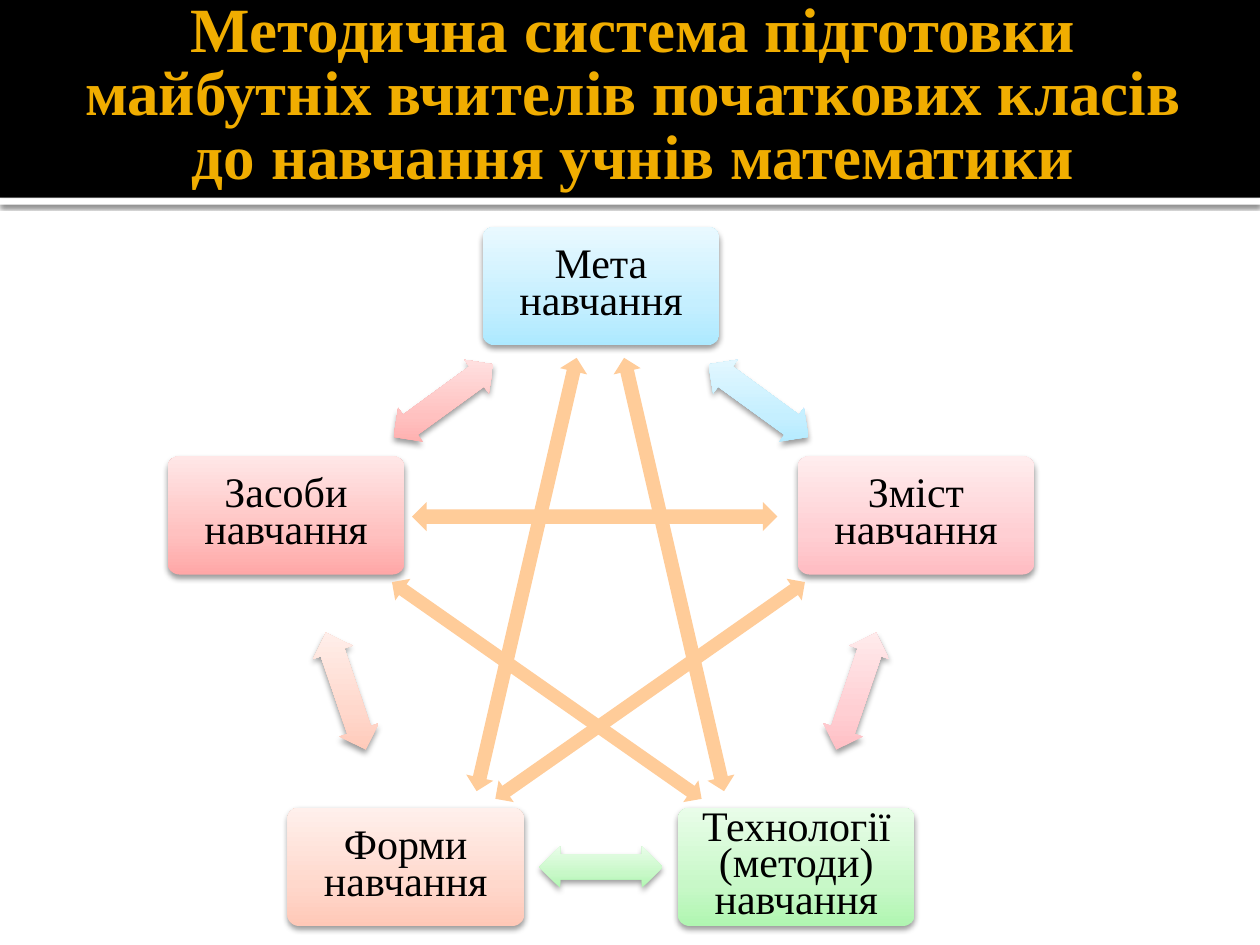
import math
from dataclasses import dataclass

import pptx
import pptx.dml.color
import pptx.enum.shapes
import pptx.enum.text
import pptx.oxml
import pptx.oxml.ns
import pptx.util
from pptx.util import Inches

MSO = pptx.enum.shapes.MSO_SHAPE
NS = pptx.oxml.ns.nsdecls("a")


@dataclass(frozen=True)
class Theme:
    font: str = "Times New Roman"
    title_size: int = 36
    node_size: int = 24
    band: str = "000000"
    rule: str = "FFFFFF"
    title: str = "F0AD00"
    text: str = "000000"
    star: str = "FFCC99"


@dataclass(frozen=True)
class Shadow:
    alpha: int
    blur: float
    dist: float


@dataclass(frozen=True)
class Node:
    text: str
    cx: float
    cy: float
    stops: tuple[str, str, str]  # bottom, 35 %, top


@dataclass(frozen=True)
class StarArrow:
    cx: float
    cy: float
    width: float
    length: float
    angle: float


THEME = Theme()
RULE_SHADOW = Shadow(60, 2.5, 0.8)
NODE_SHADOW = Shadow(38, 3.5, 2)
NODE_W, NODE_H = 1.88, 0.94
LINK_W, LINK_H = 0.98, 0.33
AXIS = 4.77  # the ring is symmetric about this x

# Ring, clockwise from the top
NODES = [
    Node("Мета навчання", AXIS, 2.27, ("ADE9FF", "C5EFFF", "E9F9FF")),
    Node("Зміст навчання", AXIS + 2.5, 4.09, ("FFBCC2", "FFCFD3", "FFEDEE")),
    Node("Технології (методи) навчання", AXIS + 1.55, 6.88, ("B0F6B1", "C8F8C8", "E9FDE9")),
    Node("Форми навчання", AXIS - 1.55, 6.88, ("FFC8B7", "FFD8CC", "FFF0EC")),
    Node("Засоби навчання", AXIS - 2.5, 4.09, ("FFA7A7", "FFC1C0", "FFE7E7")),
]
STAR = [
    StarArrow(4.18, 4.56, 0.22, 3.53, 13),
    StarArrow(5.35, 4.56, 0.22, 3.53, -13),
    StarArrow(4.72, 4.1, 0.23, 2.9, 90),
    StarArrow(5.16, 5.48, 0.21, 3, 55),
    StarArrow(4.34, 5.48, 0.21, 3, -55),
]


def rgb(value: str):
    return pptx.dml.color.RGBColor.from_string(value)


def add_shape(s, kind, cx: float, cy: float, w: float, h: float, angle: float = 0):
    """Add an outline-free shape by its centre."""
    sp = s.shapes.add_shape(kind, Inches(cx - w / 2), Inches(cy - h / 2), Inches(w), Inches(h))
    sp.rotation = angle
    sp.line.fill.background()
    sp.shadow.inherit = False
    return sp


def fill_solid(sp, color: str) -> None:
    sp.fill.solid()
    sp.fill.fore_color.rgb = rgb(color)


def fill_gradient(sp, stops: tuple[str, str, str]) -> None:
    gs = "".join(f'<a:gs pos="{pos}"><a:srgbClr val="{color}"/></a:gs>'
                 for pos, color in zip((0, 35000, 100000), stops))
    grad = pptx.oxml.parse_xml(f'<a:gradFill {NS} rotWithShape="0"><a:gsLst>{gs}</a:gsLst>'
                               '<a:lin ang="16200000" scaled="0"/></a:gradFill>')
    sp._element.spPr.find(pptx.oxml.ns.qn("a:prstGeom")).addnext(grad)


def cast_shadow(sp, shadow: Shadow) -> None:
    effects = sp._element.spPr.find(pptx.oxml.ns.qn("a:effectLst"))
    effects.append(pptx.oxml.parse_xml(
        f'<a:outerShdw {NS} blurRad="{pptx.util.Pt(shadow.blur)}" dist="{pptx.util.Pt(shadow.dist)}" '
        f'dir="5400000" rotWithShape="0"><a:srgbClr val="000000">'
        f'<a:alpha val="{shadow.alpha * 1000}"/></a:srgbClr></a:outerShdw>'))


def write(sp, text: str, size: int, color: str, spacing: float, margins: tuple, bold=False) -> None:
    tf = sp.text_frame
    left, top, right, bottom = map(Inches, margins)
    frame = {"word_wrap": True, "vertical_anchor": pptx.enum.text.MSO_ANCHOR.MIDDLE,
             "margin_left": left, "margin_top": top, "margin_right": right, "margin_bottom": bottom}
    for name, value in frame.items():
        setattr(tf, name, value)
    p = tf.paragraphs[0]
    p.alignment = pptx.enum.text.PP_ALIGN.CENTER
    p.line_spacing = spacing
    r = p.add_run()
    r.text = text
    for name, value in {"name": THEME.font, "size": pptx.util.Pt(size), "bold": bold}.items():
        setattr(r.font, name, value)
    r.font.color.rgb = rgb(color)


def add_header(s) -> None:
    rule = add_shape(s, MSO.RECTANGLE, 5, 1.6, 10, 0.05)
    fill_solid(rule, THEME.rule)
    cast_shadow(rule, RULE_SHADOW)
    fill_solid(add_shape(s, MSO.RECTANGLE, 5, 0.785, 10, 1.57), THEME.band)


def add_title(s) -> None:
    # The deep bottom margin lifts the text into the band
    sp = s.shapes.add_textbox(Inches(0.5), Inches(0.35), Inches(9), Inches(1.37))
    write(sp, "Методична система підготовки майбутніх вчителів початкових класів "
          "до навчання учнів математики", THEME.title_size, THEME.title, 0.84,
          (0.1, 0.05, 0.05, 0.58), bold=True)


def add_node(s, node: Node) -> None:
    sp = add_shape(s, MSO.ROUNDED_RECTANGLE, node.cx, node.cy, NODE_W, NODE_H)
    sp.adjustments[0] = 0.1
    fill_gradient(sp, node.stops)
    cast_shadow(sp, NODE_SHADOW)
    write(sp, node.text, THEME.node_size, THEME.text, 0.73, (0.1,) * 4)


def add_link(s, start: Node, end: Node) -> None:
    """Put a double arrow halfway between neighbours, along their direction."""
    angle = math.degrees(math.atan2(end.cy - start.cy, end.cx - start.cx))
    sp = add_shape(s, MSO.LEFT_RIGHT_ARROW, (start.cx + end.cx) / 2, (start.cy + end.cy) / 2,
                   LINK_W, LINK_H, angle)
    sp.adjustments[0] = 0.6
    sp.adjustments[1] = 0.5
    fill_gradient(sp, start.stops)
    cast_shadow(sp, NODE_SHADOW)


def add_star_arrow(s, arrow: StarArrow) -> None:
    sp = add_shape(s, MSO.UP_DOWN_ARROW, arrow.cx, arrow.cy, arrow.width, arrow.length, arrow.angle)
    fill_solid(sp, THEME.star)


def main() -> None:
    prs = pptx.Presentation()
    prs.slide_width, prs.slide_height = Inches(10), Inches(7.5)
    s = prs.slides.add_slide(prs.slide_layouts[6])

    add_header(s)
    # Ring of nodes and links
    for node, following in zip(NODES, NODES[1:] + NODES[:1]):
        add_node(s, node)
        add_link(s, node, following)
    # Inner star
    for arrow in STAR:
        add_star_arrow(s, arrow)
    add_title(s)

    prs.save("out.pptx")


if __name__ == "__main__":
    main()
